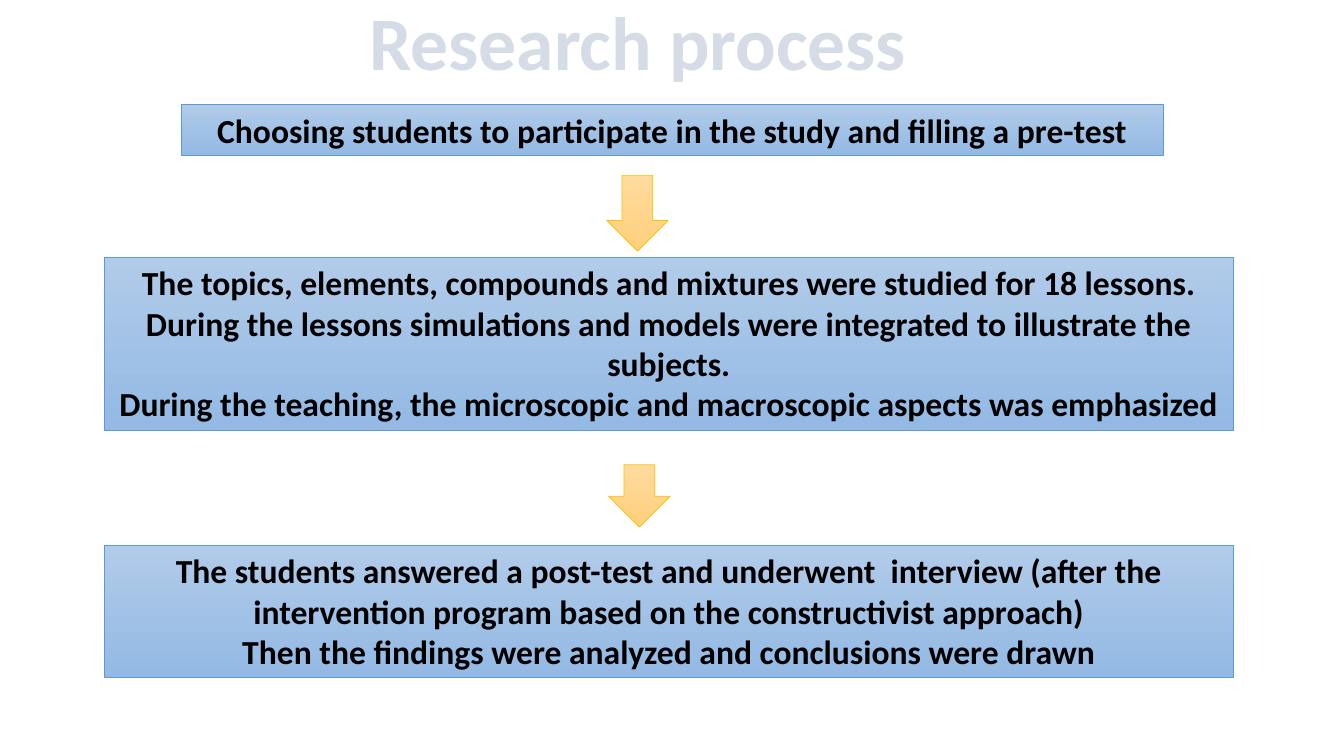
"""Build the research process slide: a title and three steps joined by block arrows."""
from dataclasses import dataclass

import pptx
import pptx.dml.color
import pptx.enum.shapes
import pptx.enum.text
import pptx.util

Cm = pptx.util.Cm
RGB = pptx.dml.color.RGBColor.from_string
SHAPES = pptx.enum.shapes.MSO_SHAPE

COLOURS = {
    "title": "D6DCE5",
    "text": "000000",
    "step_top": "B1CBE9",
    "step_bottom": "93B9E4",
    "step_line": "5B9BD5",
    "arrow_top": "FFDB9E",
    "arrow_bottom": "FFD07C",
    "arrow_line": "FFC000",
}
STEP_FONT = {"name": "Calibri", "size": pptx.util.Pt(24), "bold": True}
TITLE_FONT = {**STEP_FONT, "size": pptx.util.Pt(54)}
FRAME_FORMAT = {
    "word_wrap": True,
    "auto_size": pptx.enum.text.MSO_AUTO_SIZE.SHAPE_TO_FIT_TEXT,
    "vertical_anchor": pptx.enum.text.MSO_ANCHOR.TOP,
}


@dataclass
class Block:
    left: float
    top: float
    width: float
    height: float
    paragraphs: tuple[str, ...] = ()

    def bounds(self) -> tuple:
        return tuple(Cm(n) for n in (self.left, self.top, self.width, self.height))


TITLE = Block(4.57, -0.25, 23.01, 2.57, ("Research process",))
STEPS = (
    Block(4.57, 2.64, 24.74, 1.28,
          ("Choosing students to participate in the study and filling a pre-test",)),
    Block(2.62, 6.48, 28.47, 4.37,
          ("The topics, elements, compounds and mixtures were studied for 18 lessons.\n"
           "During the lessons simulations and models were integrated to illustrate the subjects.\n"
           "During the teaching, the microscopic and macroscopic aspects was emphasized",)),
    Block(2.62, 13.74, 28.47, 3.33,
          ("The students answered a post-test and underwent  interview (after the "
           "intervention program based on the constructivist approach)",
           "Then the findings were analyzed and conclusions were drawn")),
)
ARROWS = (Block(15.29, 4.42, 1.55, 1.91), Block(15.34, 11.71, 1.55, 1.57))


def set_attributes(target: object, values: dict) -> None:
    for name, value in values.items():
        setattr(target, name, value)


def write_text(box, paragraphs: tuple[str, ...], font: dict, colour: str) -> None:
    frame = box.text_frame
    set_attributes(frame, FRAME_FORMAT)
    for index, text in enumerate(paragraphs):
        para = frame.add_paragraph() if index else frame.paragraphs[0]
        para.text = text
        para.alignment = pptx.enum.text.PP_ALIGN.CENTER
        for span in para.runs:
            set_attributes(span.font, font)
            span.font.color.rgb = RGB(COLOURS[colour])


def add_block(page, block: Block, preset, style: str):
    shape = page.shapes.add_shape(preset, *block.bounds())
    shape.shadow.inherit = False
    shape.fill.gradient()
    shape.fill.gradient_angle = 270
    for stop, end, position in zip(shape.fill.gradient_stops, ("top", "bottom"), (0, 1)):
        stop.color.rgb = RGB(COLOURS[f"{style}_{end}"])
        stop.position = position
    shape.line.color.rgb = RGB(COLOURS[f"{style}_line"])
    shape.line.width = pptx.util.Pt(0.5)
    return shape


def main() -> None:
    deck = pptx.Presentation()
    set_attributes(deck, {"slide_width": Cm(33.87), "slide_height": Cm(19.05)})
    page = deck.slides.add_slide(deck.slide_layouts[6])
    for step in STEPS:
        box = add_block(page, step, SHAPES.RECTANGLE, "step")
        write_text(box, step.paragraphs, STEP_FONT, "text")
    for arrow in ARROWS:
        add_block(page, arrow, SHAPES.DOWN_ARROW, "arrow")
    heading = page.shapes.add_textbox(*TITLE.bounds())
    write_text(heading, TITLE.paragraphs, TITLE_FONT, "title")
    deck.save("out.pptx")


if __name__ == "__main__":
    main()
